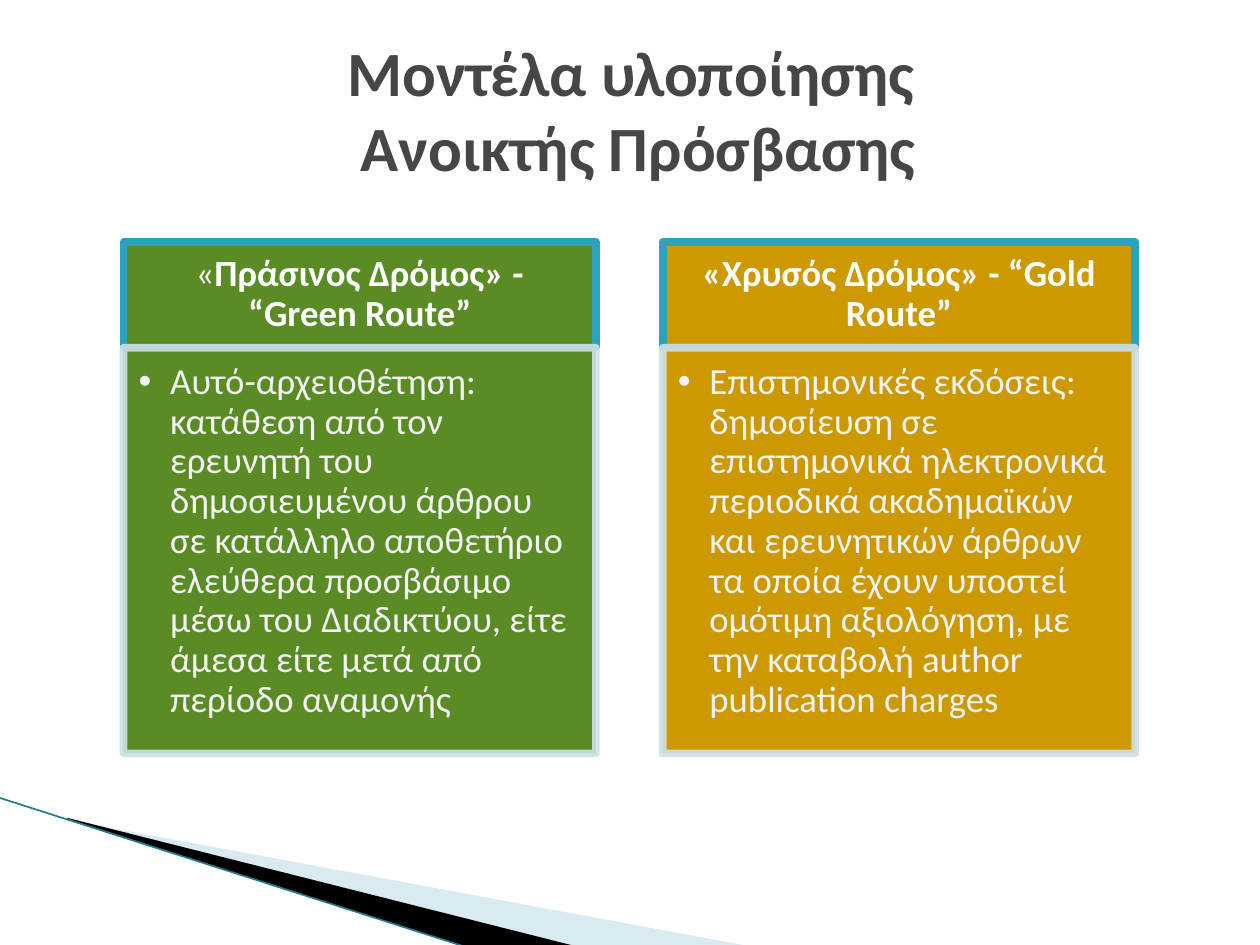
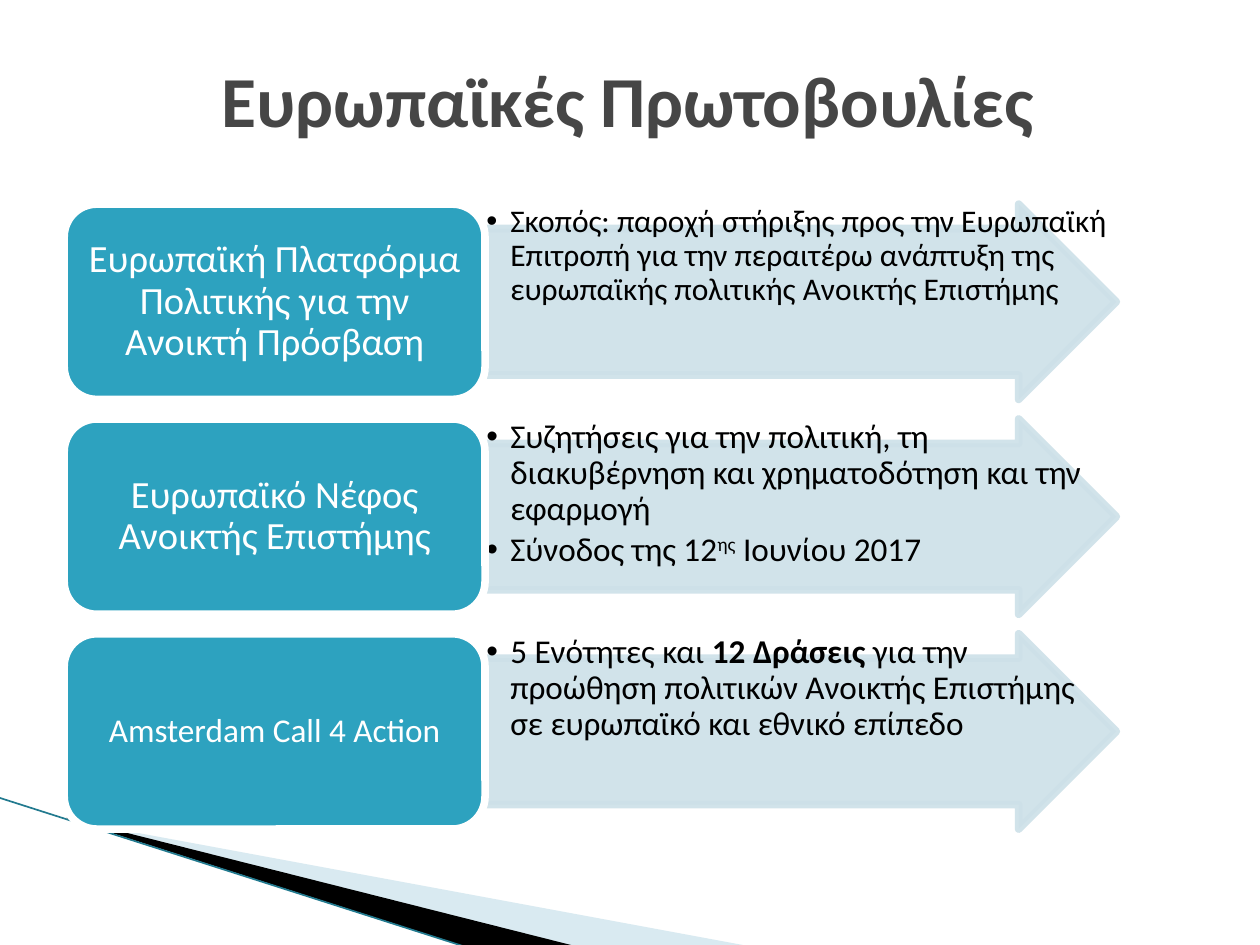
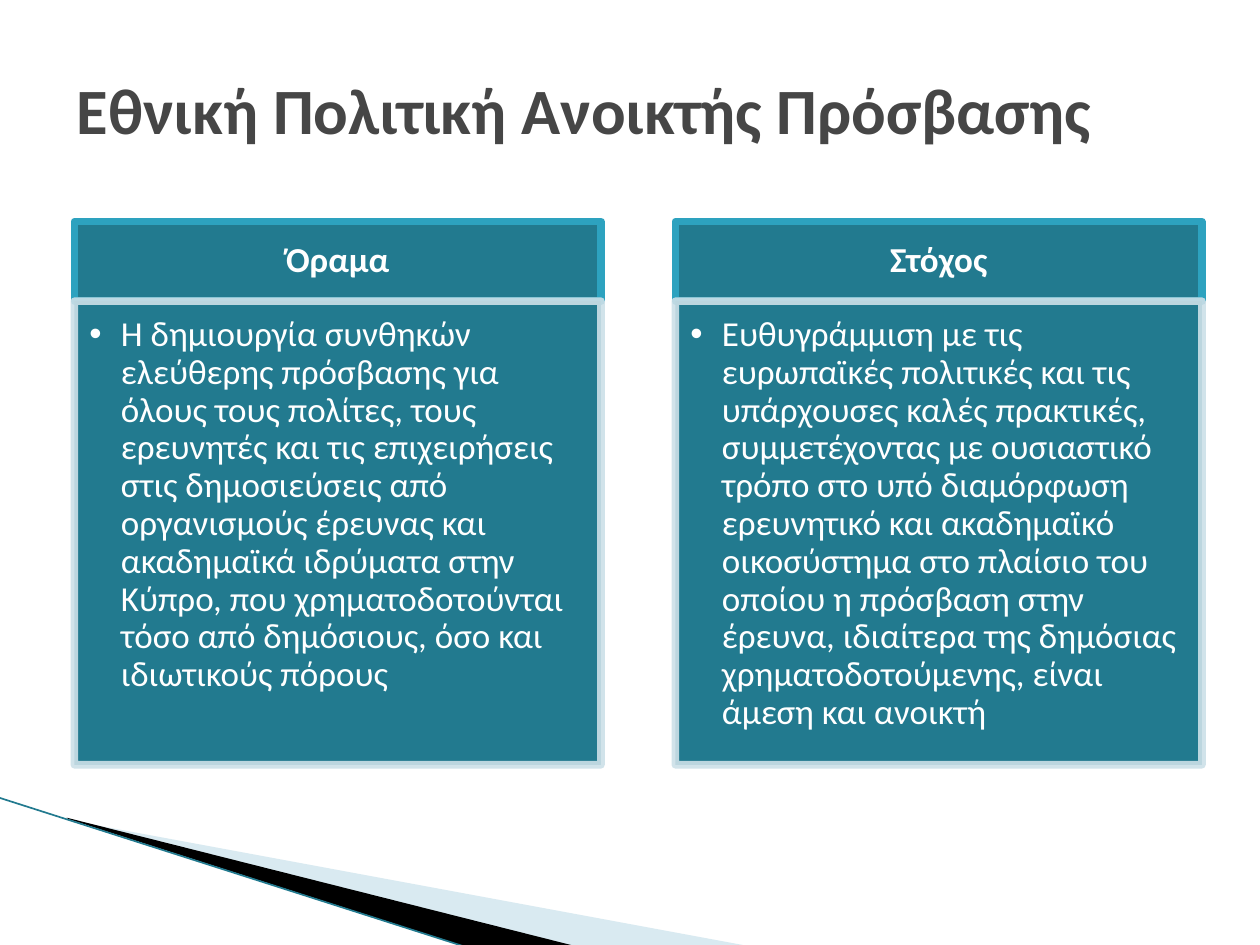
from dataclasses import dataclass

from lxml import etree
from pptx import Presentation
from pptx.dml.color import RGBColor
from pptx.enum import shapes, text
from pptx.oxml.ns import qn
from pptx.util import Inches, Pt

# Shared look
FONT = "Calibri"
WHITE = RGBColor(0xFF, 0xFF, 0xFF)
BLACK = RGBColor(0x00, 0x00, 0x00)
OFF_WHITE = RGBColor(0xF2, 0xF2, 0xF2)
TITLE_GREY = RGBColor(0x46, 0x46, 0x46)
TEAL = RGBColor(0x2D, 0xA2, 0xBF)
DARK_TEAL = RGBColor(0x22, 0x7A, 0x8F)
PALE_BLUE = RGBColor(0xCD, 0xE0, 0xE8)
SWOOSH_BLUE = RGBColor(0xA0, 0xCB, 0xDC)
GREEN = RGBColor(0x5A, 0x8B, 0x25)
GOLD = RGBColor(0xCC, 0x99, 0x00)
BORDER = Pt(4.33)
TITLE_WIDTH, TITLE_HEIGHT = 8.95, 1.15
CARD_INSETS = (0.16, 0.09, 0.16, 0.09)
LIST_INSETS = (0.12, 0.12, 0.16, 0.18)


@dataclass
class Piece:
    """A stretch of text with one formatting."""
    words: str
    bold: bool = False
    raised: bool = False


@dataclass
class Card:
    heading: list[Piece]
    body: str
    fill: RGBColor


@dataclass
class CardGrid:
    left: float
    top: float
    width: float
    pitch: float
    heading_height: float
    body_height: float
    size: float
    body_color: RGBColor


@dataclass
class Initiative:
    name: str
    name_size: float
    points: list[list[Piece]]
    points_size: float


# Helpers
def fade(element, percent: int) -> None:
    for color in element.iter(qn("a:srgbClr")):
        etree.SubElement(color, qn("a:alpha"), val=str(percent * 1000))


def paint(shape, fill: RGBColor, border: RGBColor | None = None) -> None:
    shape.shadow.inherit = False
    shape.fill.solid()
    shape.fill.fore_color.rgb = fill
    if border is None:
        shape.line.fill.background()
    else:
        shape.line.color.rgb = border
        shape.line.width = BORDER


def add_block(slide, kind, left: float, top: float, width: float, height: float,
              fill: RGBColor, border: RGBColor):
    block = slide.shapes.add_shape(kind, Inches(left), Inches(top),
                                   Inches(width), Inches(height))
    paint(block, fill, border)
    return block


def add_run(paragraph, piece: Piece, size: float, color: RGBColor) -> None:
    run = paragraph.add_run()
    run.text = piece.words
    run.font.name = FONT
    run.font.size = Pt(size)
    run.font.bold = piece.bold
    run.font.color.rgb = color
    if piece.raised:
        run.font._element.set("baseline", "30000")


def write(shape, paragraphs: list[list[Piece]], size: float, color: RGBColor,
          insets: tuple, bullet_indent: float = 0) -> None:
    """Fill a shape with centred text, or with a bulleted list if indented."""
    frame = shape.text_frame
    frame.word_wrap = True
    (frame.margin_left, frame.margin_top,
     frame.margin_right, frame.margin_bottom) = map(Inches, insets)
    frame.vertical_anchor = (text.MSO_ANCHOR.TOP if bullet_indent
                             else text.MSO_ANCHOR.MIDDLE)
    for index, pieces in enumerate(paragraphs):
        paragraph = frame.add_paragraph() if index else frame.paragraphs[0]
        if bullet_indent:
            properties = paragraph._p.get_or_add_pPr()
            properties.set("marL", str(Inches(bullet_indent)))
            properties.set("indent", str(-Inches(bullet_indent)))
            etree.SubElement(properties, qn("a:buFont"), typeface="Arial")
            etree.SubElement(properties, qn("a:buChar"), char="•")
        paragraph.alignment = (text.PP_ALIGN.LEFT if bullet_indent
                               else text.PP_ALIGN.CENTER)
        paragraph.line_spacing = 0.9
        paragraph.space_after = Pt(size * (0.15 if bullet_indent else 0.35))
        for piece in pieces:
            add_run(paragraph, piece, size, color)


def set_title(slide, lines: list[str], left: float, top: float, size: float,
              alignment=text.PP_ALIGN.CENTER) -> None:
    title = slide.shapes.title
    title.left, title.top = Inches(left), Inches(top)
    title.width, title.height = Inches(TITLE_WIDTH), Inches(TITLE_HEIGHT)
    frame = title.text_frame
    frame.auto_size = text.MSO_AUTO_SIZE.NONE
    frame.vertical_anchor = text.MSO_ANCHOR.MIDDLE
    paragraph = frame.paragraphs[0]
    paragraph.alignment = alignment
    for index, line in enumerate(lines):
        if index:
            paragraph.add_line_break()
        add_run(paragraph, Piece(line, bold=True), size, TITLE_GREY)


def add_swoosh(slide, corners: list[tuple], fill: RGBColor):
    points = [(Inches(x), Inches(y)) for x, y in corners]
    builder = slide.shapes.build_freeform(*points[0])
    builder.add_line_segments(points[1:], close=True)
    swoosh = builder.convert_to_shape()
    paint(swoosh, fill)
    return swoosh


def decorate_layout(layout, slide) -> None:
    """Draw the corner swooshes and move them to the shared layout."""
    pale = add_swoosh(slide, [(0.55, 6.51), (5.95, 7.51), (4.56, 7.51), (0.55, 6.5)],
                      SWOOSH_BLUE)
    fade(pale.element.spPr, 40)
    dark = add_swoosh(slide, [(0.53, 6.49), (4.57, 7.51), (3.72, 7.52), (0.54, 6.5)],
                      BLACK)
    edge = slide.shapes.add_connector(shapes.MSO_CONNECTOR.STRAIGHT, Inches(-0.01),
                                      Inches(6.33), Inches(3.71), Inches(7.52))
    edge.line.color.rgb = DARK_TEAL
    edge.line.width = Pt(0.95)
    etree.SubElement(edge.element.spPr, qn("a:effectLst"))
    for part in (pale, dark, edge):
        layout.element.cSld.spTree.append(part.element)


def add_cards(slide, cards: list[Card], grid: CardGrid) -> None:
    rectangle = shapes.MSO_SHAPE.RECTANGLE
    for index, card in enumerate(cards):
        left = grid.left + index * grid.pitch
        heading = add_block(slide, rectangle, left, grid.top, grid.width,
                            grid.heading_height, card.fill, TEAL)
        write(heading, [card.heading], grid.size, WHITE, CARD_INSETS)
        body = add_block(slide, rectangle, left, grid.top + grid.heading_height,
                         grid.width, grid.body_height, card.fill, PALE_BLUE)
        fade(body.element.spPr.find(qn("a:ln")), 90)
        write(body, [[Piece(card.body)]], grid.size, grid.body_color,
              LIST_INSETS, bullet_indent=0.25)


def add_initiatives(slide, initiatives: list[Initiative]) -> None:
    left, top, height = 0.51, 1.62, 1.55
    name_width, arrow_width = 3.34, 5.01
    arrow_left = left + name_width
    for index, initiative in enumerate(initiatives):
        row_top = top + index * height * 1.1
        arrow = add_block(slide, shapes.MSO_SHAPE.RIGHT_ARROW, arrow_left, row_top,
                          arrow_width, height, PALE_BLUE, PALE_BLUE)
        arrow.adjustments[0] = 0.75
        arrow.adjustments[1] = 0.5
        fade(arrow.element.spPr, 90)
        points = slide.shapes.add_textbox(Inches(arrow_left), Inches(row_top),
                                          Inches(arrow_width), Inches(height))
        write(points, initiative.points, initiative.points_size, BLACK,
              (0.01,) * 4, bullet_indent=0.19)
        name = add_block(slide, shapes.MSO_SHAPE.ROUNDED_RECTANGLE, left, row_top,
                         name_width, height, TEAL, WHITE)
        write(name, [[Piece(initiative.name)]], initiative.name_size, WHITE,
              (0.05,) * 4)


# Content
ROUTES = [
    Card([Piece("«"), Piece("Πράσινος Δρόμος» - “Green Route”", bold=True)],
         "Αυτό-αρχειοθέτηση: κατάθεση από τον ερευνητή του δημοσιευμένου άρθρου "
         "σε κατάλληλο αποθετήριο ελεύθερα προσβάσιμο μέσω του Διαδικτύου, είτε "
         "άμεσα είτε μετά από περίοδο αναμονής", GREEN),
    Card([Piece("«Χρυσός Δρόμος» - “Gold Route”", bold=True)],
         "Επιστημονικές εκδόσεις: δημοσίευση σε επιστημονικά ηλεκτρονικά περιοδικά "
         "ακαδημαϊκών και ερευνητικών άρθρων τα οποία έχουν υποστεί ομότιμη "
         "αξιολόγηση, με την καταβολή author publication charges", GOLD),
]
INITIATIVES = [
    Initiative("Ευρωπαϊκή Πλατφόρμα Πολιτικής για την Ανοικτή Πρόσβαση", 22, [
        [Piece("Σκοπός: παροχή στήριξης προς την Ευρωπαϊκή Επιτροπή για την περαιτέρω "
               "ανάπτυξη της ευρωπαϊκής πολιτικής Ανοικτής Επιστήμης")]], 18),
    Initiative("Ευρωπαϊκό Νέφος Ανοικτής Επιστήμης", 22, [
        [Piece("Συζητήσεις για την πολιτική, τη διακυβέρνηση και χρηματοδότηση "
               "και την εφαρμογή")],
        [Piece("Σύνοδος της 12"), Piece("ης", raised=True),
         Piece(" Ιουνίου 2017")]], 19),
    Initiative("Amsterdam Call 4 Action", 19, [
        [Piece("5 Ενότητες και "), Piece("12 Δράσεις ", bold=True),
         Piece("για την προώθηση πολιτικών Ανοικτής Επιστήμης σε ευρωπαϊκό "
               "και εθνικό επίπεδο")]], 19),
]
POLICY = [
    Card([Piece("Όραμα", bold=True)],
         "Η δημιουργία συνθηκών ελεύθερης πρόσβασης για όλους τους πολίτες, τους "
         "ερευνητές και τις επιχειρήσεις στις δημοσιεύσεις από οργανισμούς έρευνας "
         "και ακαδημαϊκά ιδρύματα στην Κύπρο, που χρηματοδοτούνται τόσο από "
         "δημόσιους, όσο και ιδιωτικούς πόρους", DARK_TEAL),
    Card([Piece("Στόχος", bold=True)],
         "Ευθυγράμμιση με τις ευρωπαϊκές πολιτικές και τις υπάρχουσες καλές "
         "πρακτικές, συμμετέχοντας με ουσιαστικό τρόπο στο υπό διαμόρφωση "
         "ερευνητικό και ακαδημαϊκό οικοσύστημα στο πλαίσιο του οποίου η πρόσβαση "
         "στην έρευνα, ιδιαίτερα της δημόσιας χρηματοδοτούμενης, είναι άμεση και "
         "ανοικτή", DARK_TEAL),
]


def main() -> None:
    deck = Presentation()
    deck.slide_width, deck.slide_height = Inches(10), Inches(7.5)
    layout = deck.slide_layouts[5]
    models, europe, national = [deck.slides.add_slide(layout) for _ in range(3)]
    decorate_layout(layout, models)

    # Open access models
    set_title(models, ["Μοντέλα υλοποίησης ", "Ανοικτής Πρόσβασης"], 0.59, 0.29, 36)
    add_cards(models, ROUTES,
              CardGrid(0.98, 1.92, 3.75, 4.28, 0.84, 3.22, 21, OFF_WHITE))

    # European initiatives
    set_title(europe, ["Ευρωπαϊκές Πρωτοβουλίες"], 0.51, 0.21, 41)
    add_initiatives(europe, INITIATIVES)

    # National policy
    set_title(national, ["Εθνική Πολιτική Ανοικτής Πρόσβασης"], 0.51, 0.29, 36.9,
              text.PP_ALIGN.LEFT)
    add_cards(national, POLICY,
              CardGrid(0.59, 1.76, 4.18, 4.77, 0.63, 3.68, 20, WHITE))

    deck.save("out.pptx")


if __name__ == "__main__":
    main()
